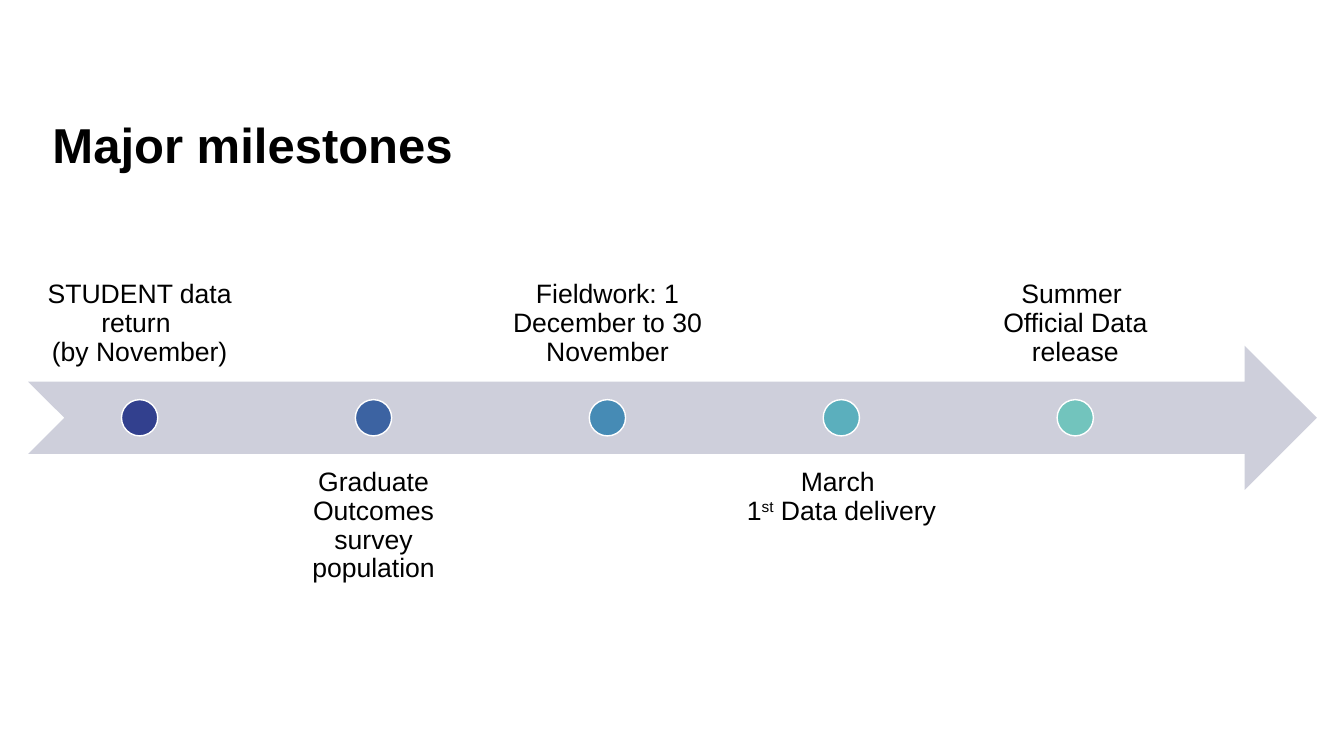
"""Build a slide with a timeline of major milestones."""
from pptx import Presentation
from pptx.dml.color import RGBColor
from pptx.enum.shapes import MSO_SHAPE as Shape
from pptx.enum.text import MSO_ANCHOR as Anchor, PP_ALIGN as Align
from pptx.util import Inches, Pt

TITLE = "Major milestones"
STEPS = [
    ([["STUDENT data return "], ["(by November)"]], "navy"),
    ([["Graduate Outcomes survey population"]], "blue"),
    ([["Fieldwork: 1 December to 30 November"]], "sky"),
    ([["March "], ["1", "^st", " Data delivery"]], "teal"),
    ([["Summer "], ["Official Data release"]], "mint"),
]
COLORS = {
    "navy": "32408E", "blue": "3C63A2", "sky": "468BB5", "teal": "5BAFBD",
    "mint": "72C4BD", "arrow": "CECFDB", "white": "FFFFFF", "black": "000000",
}
FONT = "Arial"
LEFT, PITCH = 0.28, 2.32
WIDTH, HEIGHT, DOT = 2.21, 1.43, 0.36
ABOVE, ARROW, BELOW = 2.36, 3.43, 4.5


def color(name):
    return RGBColor.from_string(COLORS[name])


def place(shape, x, y, w, h):
    shape.left, shape.top = Inches(x), Inches(y)
    shape.width, shape.height = Inches(w), Inches(h)


def set_frame(frame, inset, anchor):
    frame.word_wrap = True
    frame.vertical_anchor = anchor
    frame.margin_left = frame.margin_right = Inches(inset)
    frame.margin_top = frame.margin_bottom = Inches(inset)


def add_run(para, text, size, bold=False):
    run = para.add_run()
    run.text = text.lstrip("^")
    font = run.font
    font.name, font.size, font.bold = FONT, Pt(size), bold
    font.color.rgb = color("black")
    if text.startswith("^"):
        font._element.set("baseline", "30000")


def add_shape(slide, kind, x, y, w, h, fill):
    shape = slide.shapes.add_shape(
        kind, Inches(x), Inches(y), Inches(w), Inches(h))
    shape.shadow.inherit = False
    shape.fill.solid()
    shape.fill.fore_color.rgb = color(fill)
    return shape


def add_title(slide):
    title = slide.shapes.title
    place(title, 0.52, 1.08, 12.38, 0.95)
    set_frame(title.text_frame, 0, Anchor.TOP)
    para = title.text_frame.paragraphs[0]
    para.alignment, para.line_spacing = Align.LEFT, Pt(46)
    add_run(para, TITLE, 35, True)


def add_label(slide, lines, x, above):
    box = slide.shapes.add_textbox(
        Inches(x), Inches(ABOVE if above else BELOW),
        Inches(WIDTH), Inches(HEIGHT))
    set_frame(box.text_frame, 0.15, Anchor.BOTTOM if above else Anchor.TOP)
    para = box.text_frame.paragraphs[0]
    para.alignment, para.line_spacing = Align.CENTER, 0.9
    for row, parts in enumerate(lines):
        if row:
            para.add_line_break()
        for part in parts:
            add_run(para, part, 19)


def add_dot(slide, x, fill):
    dot = add_shape(slide, Shape.OVAL, x + (WIDTH - DOT) / 2,
                    ARROW + (HEIGHT - DOT) / 2, DOT, DOT, fill)
    dot.line.color.rgb = color("white")
    dot.line.width = Pt(1)


def main():
    deck = Presentation()
    deck.slide_width, deck.slide_height = Inches(13.33), Inches(7.5)
    slide = deck.slides.add_slide(deck.slide_layouts[5])
    add_title(slide)
    arrow = add_shape(slide, Shape.NOTCHED_RIGHT_ARROW,
                      LEFT, ARROW, 12.78, HEIGHT, "arrow")
    arrow.line.fill.background()
    for i, (lines, fill) in enumerate(STEPS):
        x = LEFT + i * PITCH
        add_label(slide, lines, x, i % 2 == 0)
        add_dot(slide, x, fill)
    deck.save("out.pptx")


if __name__ == "__main__":
    main()
